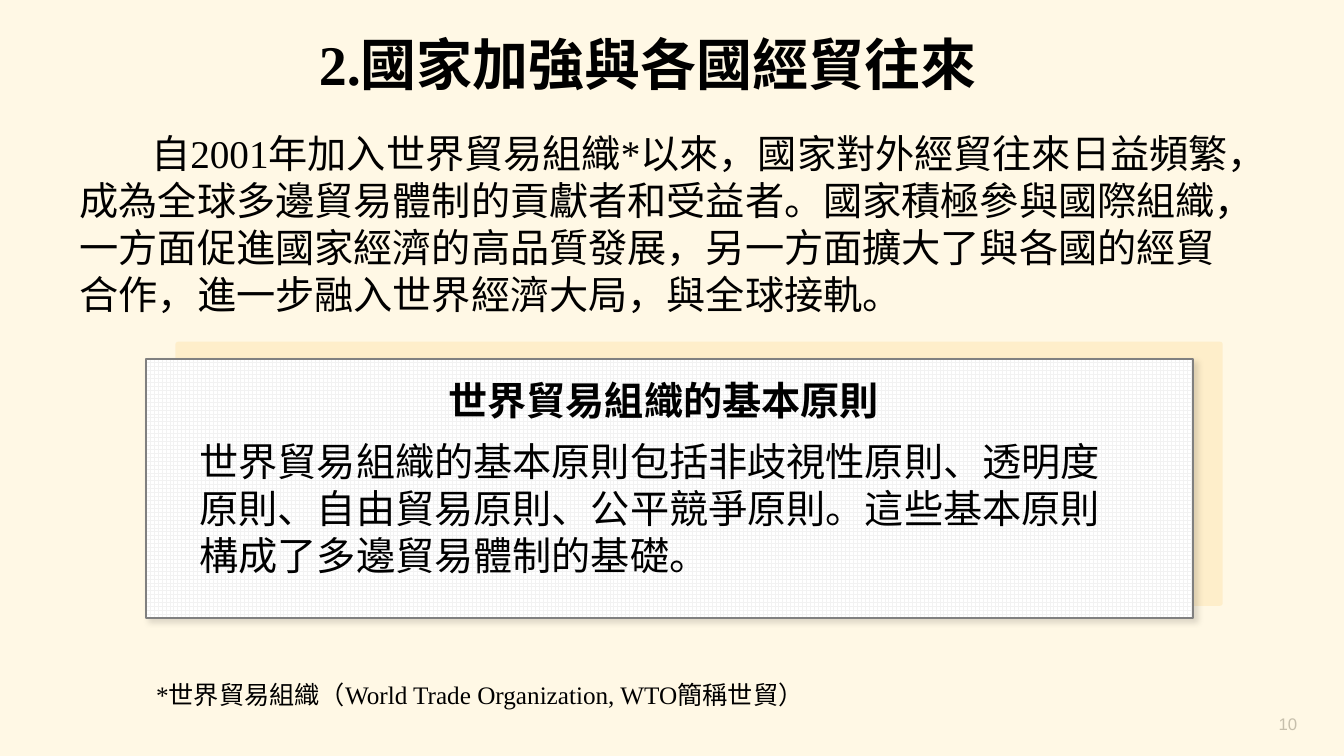
from dataclasses import dataclass

from lxml import etree
from pptx import Presentation
from pptx.dml.color import RGBColor
from pptx.enum.dml import MSO_PATTERN
from pptx.enum.shapes import MSO_SHAPE
from pptx.enum.text import MSO_ANCHOR, MSO_AUTO_SIZE, PP_ALIGN
from pptx.oxml import parse_xml
from pptx.oxml.ns import nsdecls, qn
from pptx.shapes.autoshape import Shape
from pptx.util import Pt

CREAM = RGBColor(0xFF, 0xF8, 0xE5)
AMBER = RGBColor(0xFD, 0xB4, 0x2A)
WHITE = RGBColor(0xFF, 0xFF, 0xFF)
GRID_GREY = RGBColor(0xF2, 0xF2, 0xF2)
BORDER_GREY = RGBColor(0x80, 0x80, 0x80)
NUMBER_GREY = RGBColor(0xC6, 0xBF, 0xAC)
BLACK = RGBColor(0, 0, 0)
SERIF, SANS = "Times New Roman", "Lato"


@dataclass(frozen=True)
class Box:
    left: float
    top: float
    width: float
    height: float

    def lengths(self) -> tuple[Pt, Pt, Pt, Pt]:
        return Pt(self.left), Pt(self.top), Pt(self.width), Pt(self.height)


@dataclass(frozen=True)
class Piece:
    text: str
    font: str


@dataclass(frozen=True)
class Label:
    box: Box
    piece: Piece
    size: float
    bold: bool = False
    color: RGBColor = BLACK
    align: PP_ALIGN = PP_ALIGN.LEFT
    anchor: MSO_ANCHOR = MSO_ANCHOR.TOP


def write(shape: Shape, pieces: list[Piece], size: float, bold: bool = False,
          color: RGBColor = BLACK, align: PP_ALIGN = PP_ALIGN.LEFT) -> None:
    """Fill the shape with one paragraph made of the given pieces."""
    frame = shape.text_frame
    frame.word_wrap = True
    frame.auto_size = MSO_AUTO_SIZE.NONE
    paragraph = frame.paragraphs[0]
    paragraph.alignment = align
    paragraph.space_before = Pt(0)
    for piece in pieces:
        run = paragraph.add_run()
        run.text = piece.text
        run.font.name = piece.font
        run.font.size = Pt(size)
        run.font.bold = bold
        run.font.color.rgb = color


def place(shape: Shape, box: Box) -> None:
    shape.left, shape.top, shape.width, shape.height = box.lengths()


def add_label(shapes, label: Label) -> None:
    shape = shapes.add_textbox(*label.box.lengths())
    shape.text_frame.vertical_anchor = label.anchor
    write(shape, [label.piece], label.size, label.bold, label.color, label.align)


def add_panel(shapes, kind: MSO_SHAPE, box: Box) -> Shape:
    panel = shapes.add_shape(kind, *box.lengths())
    panel.shadow.inherit = False
    panel.line.fill.background()
    return panel


TITLE = [Piece("2.國", SERIF), Piece("家加強與各國經貿往來", SANS)]
BODY = [
    Piece("自", SANS),
    Piece("2001年加入世界貿易組織*以來，國家對外經貿往來日益頻繁，"
          "成為全球多邊貿易體制的貢獻者和受益者。國家積極參與國際組織，"
          "一方面促進國家經濟的高品質發展，另一方面擴大了與各國的經貿合作，"
          "進一步融入世界經濟大局，與全球接軌。", SERIF),
]
PRINCIPLES = [
    Label(Box(135.4, 308.9, 675.4, 108.7),
          Piece("世界貿易組織的基本原則包括非歧視性原則、透明度原則、自由貿易原則、"
                "公平競爭原則。這些基本原則構成了多邊貿易體制的基礎。", SANS), 28),
    Label(Box(313.2, 265, 331.2, 41), Piece("世界貿易組織的基本原則", SANS), 28, bold=True),
]
FOOTER = [
    Label(Box(104.4, 481.7, 578.2, 28.8),
          Piece("*世界貿易組織（World Trade Organization, WTO簡稱世貿）", SERIF), 18),
    Label(Box(717.8, 502.6, 216, 28.8), Piece("10", "Arial"), 12, color=NUMBER_GREY,
          align=PP_ALIGN.RIGHT, anchor=MSO_ANCHOR.MIDDLE),
]


def main() -> None:
    presentation = Presentation()
    presentation.slide_width, presentation.slide_height = Pt(960), Pt(540)
    slide = presentation.slides.add_slide(presentation.slide_layouts[1])
    slide.background.fill.solid()
    slide.background.fill.fore_color.rgb = CREAM

    # Title
    title = slide.shapes.title
    place(title, Box(168.5, 23.8, 588.2, 49))
    write(title, TITLE, 40, bold=True, align=PP_ALIGN.CENTER)
    frame = title.text_frame
    frame.margin_left = frame.margin_right = Pt(19.4)
    frame.margin_top = frame.margin_bottom = Pt(2.2)
    frame.vertical_anchor = MSO_ANCHOR.MIDDLE
    frame.paragraphs[0].line_spacing = 0.9

    # Body paragraph with an indented first line
    body = slide.placeholders[1]
    place(body, Box(49.7, 88.6, 846.7, 143.3))
    properties = body.text_frame.paragraphs[0]._p.get_or_add_pPr()
    properties.set("marL", "0")
    properties.set("indent", str(Pt(51.1)))
    etree.SubElement(properties, qn("a:buNone"))
    write(body, BODY, 28)

    # Principles card: amber panel behind a gridded, shadowed one
    card = slide.shapes.add_group_shape().shapes
    backing = add_panel(card, MSO_SHAPE.ROUNDED_RECTANGLE, Box(125.3, 244.1, 748.1, 188.6))
    backing.adjustments[0] = 0.01
    backing.fill.solid()
    backing.fill.fore_color.rgb = AMBER
    amber = backing.fill._xPr.find(f"{qn('a:solidFill')}/{qn('a:srgbClr')}")
    etree.SubElement(amber, qn("a:alpha"), val="14000")

    front = add_panel(card, MSO_SHAPE.RECTANGLE, Box(104.4, 256.3, 748.1, 185))
    front.fill.patterned()
    front.fill.pattern = MSO_PATTERN.LARGE_GRID
    front.fill.fore_color.rgb = GRID_GREY
    front.fill.back_color.rgb = WHITE
    front.line.color.rgb = BORDER_GREY
    front.line.width = Pt(1.5)
    front._element.spPr.find(qn("a:effectLst")).append(parse_xml(
        f'<a:outerShdw {nsdecls("a")} blurRad="{Pt(4)}" dist="{Pt(3)}" dir="2700000" '
        'algn="tl" rotWithShape="0"><a:srgbClr val="000000"><a:alpha val="13000"/>'
        '</a:srgbClr></a:outerShdw>'))
    for label in PRINCIPLES:
        add_label(card, label)

    # Footnote and slide number
    for label in FOOTER:
        add_label(slide.shapes, label)

    presentation.save("out.pptx")


if __name__ == "__main__":
    main()
